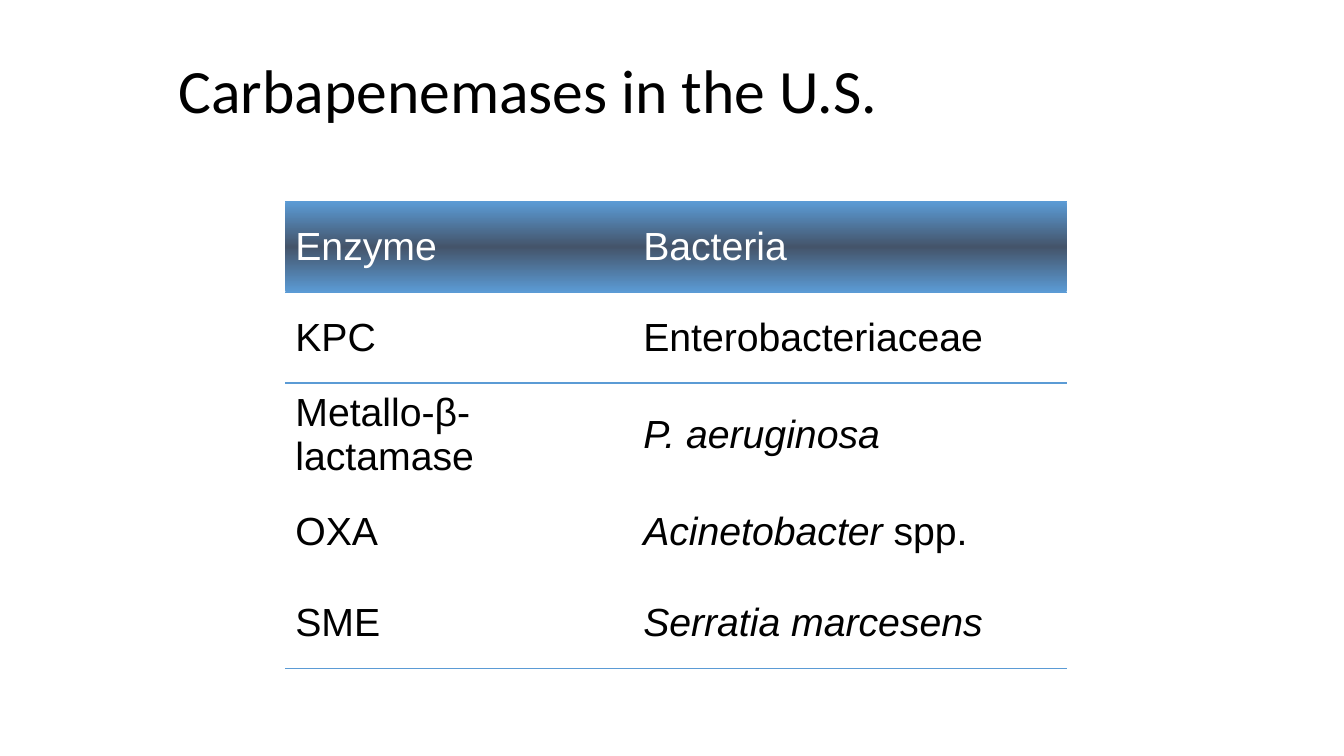
"""Builds a slide with a table of carbapenemases and their bacteria."""
from copy import deepcopy

from lxml import etree
from pptx import Presentation
from pptx import util as u
from pptx.dml.color import RGBColor
from pptx.enum import text
from pptx.oxml import ns

PX = 9144
BLUE = RGBColor(0x5B, 0x9B, 0xD5)
SLATE = RGBColor(0x44, 0x54, 0x6A)
BLACK = RGBColor(0, 0, 0)
WHITE = RGBColor(255, 255, 255)
NO_GRID = "{2D5ABB26-0587-4C30-8999-92F81FD0307C}"
WIDTHS = [345, 430]
HEIGHTS = [90, 90, 103, 90, 90]
ROWS = [
    [[("Enzyme", False)], [("Bacteria", False)]],
    [[("KPC", False)], [("Enterobacteriaceae", False)]],
    [[("Metallo-β-lactamase", False)], [("P. aeruginosa", True)]],
    [[("OXA", False)], [("Acinetobacter", True), (" spp.", False)]],
    [[("SME", False)], [("Serratia marcesens", True)]],
]
EDGES = {0: ["lnT", "lnB"], 1: ["lnT"], 4: ["lnB"]}


def style(run, font, size, color):
    run.font.name = font
    run.font.size = u.Pt(size)
    run.font.color.rgb = color


def border(cell, side):
    line = etree.SubElement(cell._tc.get_or_add_tcPr(), ns.qn("a:" + side), w="12700")
    fill = etree.SubElement(line, ns.qn("a:solidFill"))
    etree.SubElement(fill, ns.qn("a:srgbClr"), val=str(BLUE))


deck = Presentation()
deck.slide_width, deck.slide_height = 1333 * PX, 750 * PX
slide = deck.slides.add_slide(deck.slide_layouts[5])

title = slide.shapes.title
title.left, title.top, title.width, title.height = [n * PX for n in (167, 30, 900, 125)]
title.text_frame.text = "Carbapenemases in the U.S."
title.text_frame.vertical_anchor = text.MSO_ANCHOR.MIDDLE
head = title.text_frame.paragraphs[0]
head.alignment = text.PP_ALIGN.LEFT
head.line_spacing = 0.9
style(head.runs[0], "Calibri", 44, BLACK)

frame = slide.shapes.add_table(
    len(ROWS), len(WIDTHS), 283 * PX, 200 * PX, sum(WIDTHS) * PX, sum(HEIGHTS) * PX)
table = frame.table
table.first_row = table.horz_banding = False
table._tbl.tblPr.find(ns.qn("a:tableStyleId")).text = NO_GRID
for col, width in zip(table.columns, WIDTHS):
    col.width = width * PX
for row, height in zip(table.rows, HEIGHTS):
    row.height = height * PX

for r, row in enumerate(ROWS):
    for c, parts in enumerate(row):
        cell = table.cell(r, c)
        cell.vertical_anchor = text.MSO_ANCHOR.MIDDLE
        cell.margin_left = cell.margin_right = 10 * PX
        cell.margin_top = cell.margin_bottom = 5 * PX
        for side in EDGES.get(r, []):
            border(cell, side)
        if r == 0:
            cell.fill.gradient()
            cell.fill.gradient_angle = 90
            stops = cell._tc.tcPr.find(".//" + ns.qn("a:gsLst"))
            stops.insert(1, deepcopy(stops[0]))
            for i, stop in enumerate(cell.fill.gradient_stops):
                stop.position = i / 2
                stop.color.rgb = SLATE if i == 1 else BLUE
        else:
            cell.fill.background()
        para = cell.text_frame.paragraphs[0]
        gap = etree.SubElement(para._p.get_or_add_pPr(), ns.qn("a:spcBef"))
        etree.SubElement(gap, ns.qn("a:spcPct"), val="20000")
        for words, slant in parts:
            run = para.add_run()
            run.text = words
            run.font.italic = slant
            style(run, "Arial", 28, BLACK if r else WHITE)

deck.save("out.pptx")
